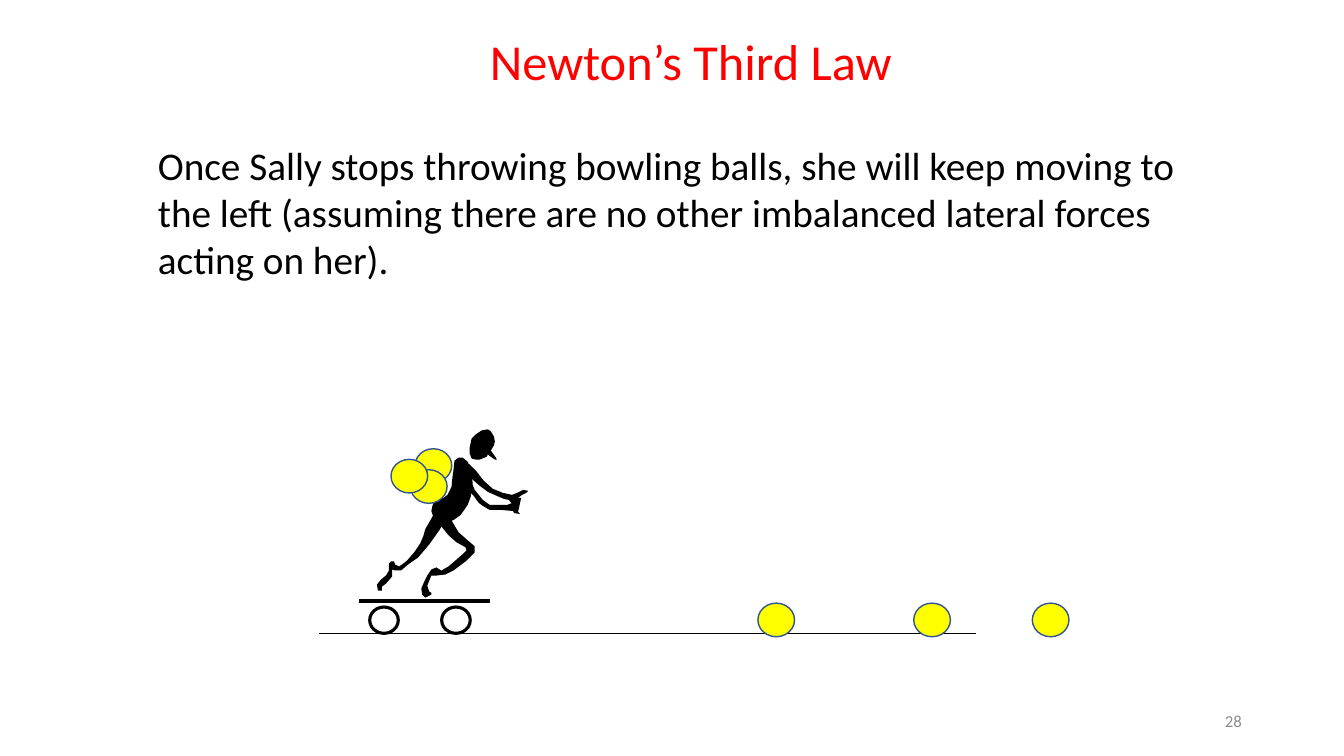
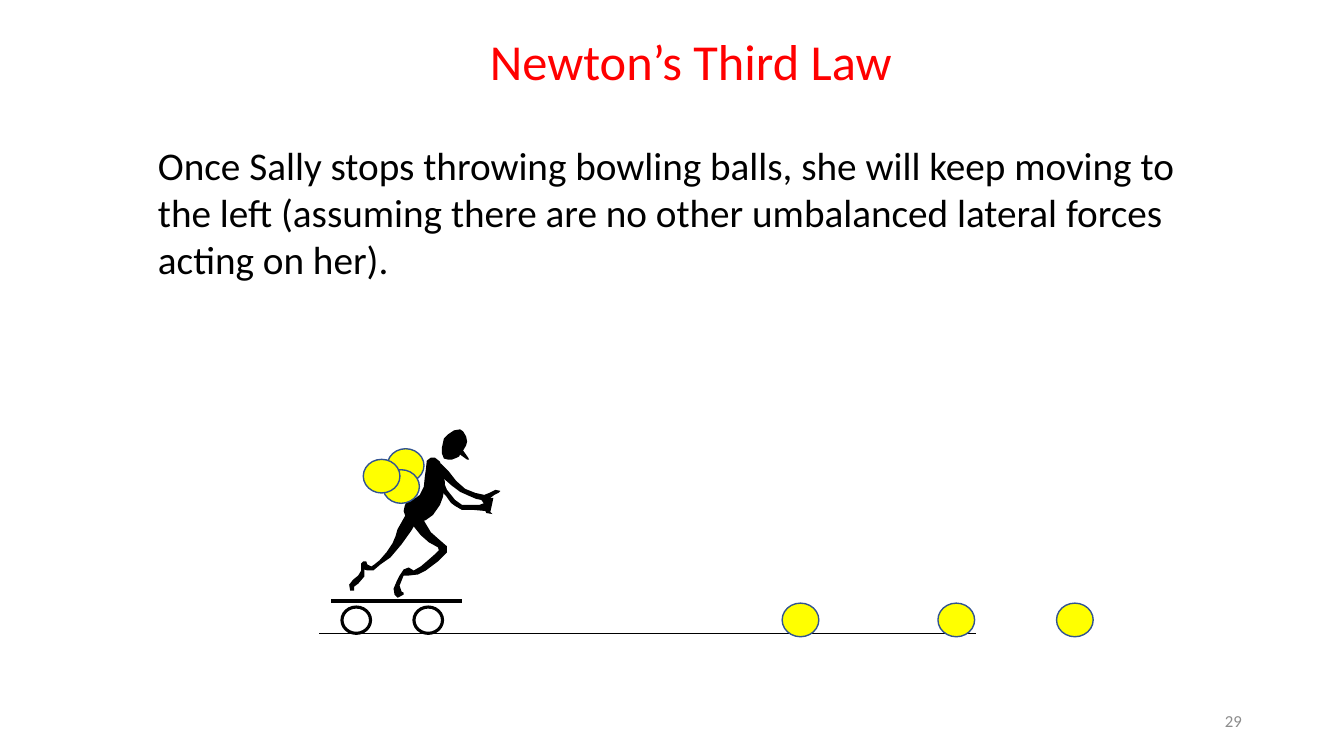
from dataclasses import dataclass

from lxml import etree
from pptx import Presentation
from pptx.dml.color import RGBColor
from pptx.enum import shapes as kinds, text as txt
from pptx.oxml.ns import qn
from pptx.util import Pt


@dataclass(frozen=True)
class Theme:
    font: str = "Calibri"
    title_size: int = 36
    body_size: int = 28
    number_size: int = 12
    title: str = "FF0000"
    ink: str = "000000"
    muted: str = "8C8C8C"
    paper: str = "FFFFFF"
    ball: str = "FFFF00"
    ball_edge: str = "325491"


THEME = Theme()

# Boxes are left, top, width, height in points.
SLIDE_SIZE = (960, 540)
TITLE_BOX = (206.6, 18, 573.8, 51)
STATEMENT_BOX = (105.8, 97.2, 751, 108.7)
NUMBER_BOX = (678.2, 500.4, 216, 28.8)
GROUND_BOX = (228.2, 452.2, 468.7, 0)
BALL_SIZE = (26.2, 24)
WHEEL_SIZE = (20.4, 18.8)
SKATER_TOP = 306.7
ROLLING_TOP = 430.8
ROLLING_OFFSETS = (0, 111.3, 196)
CARRIED_OFFSETS = ((40.2, 13.8), (36.9, 28.8), (23, 21.4))
WHEEL_OFFSETS = ((7.8, 126.9), (59.2, 126.9))
DECK_OFFSET = 122.4
DECK_LENGTH = 93.6

# Body outlines lie on a fine grid measured from the skater's top left.
GRID_STEP = 0.72
HEAD = (
    (131, 21), (134, 16), (135, 12), (134, 7), (131, 2), (128, 0), (122, 1),
    (116, 5), (112, 9), (110, 18), (110, 24), (112, 29), (116, 30), (120, 30),
    (125, 28), (127, 27), (128, 25), (135, 30), (137, 30), (136, 28),
)
TORSO = (
    (93, 47), (94, 40), (95, 31), (99, 28), (103, 28), (108, 32), (111, 41),
    (113, 53), (111, 67), (108, 75), (101, 85), (94, 90), (85, 93), (78, 91),
    (74, 87), (72, 81), (73, 76), (75, 71), (79, 69), (84, 68), (88, 65),
    (92, 57),
)
FRONT_LEG = (
    (80, 81), (82, 78), (86, 78), (89, 82), (93, 92), (99, 102), (108, 110),
    (115, 116), (115, 119), (115, 122), (106, 131), (94, 140), (86, 144),
    (77, 145), (72, 145), (70, 150), (68, 155), (70, 161), (72, 162),
    (72, 164), (66, 167), (63, 164), (62, 158), (65, 151), (68, 145),
    (72, 139), (77, 137), (82, 140), (89, 136), (96, 130), (104, 123),
    (107, 120), (106, 117), (97, 112), (89, 105), (81, 95), (77, 87),
)
BACK_LEG = (
    (66, 99), (74, 85), (81, 78), (86, 79), (88, 86), (80, 100), (70, 114),
    (59, 127), (49, 134), (42, 140), (36, 140), (33, 139), (33, 146),
    (27, 153), (23, 156), (23, 160), (19, 160), (18, 154), (22, 149),
    (27, 145), (30, 140), (30, 134), (30, 133), (32, 131), (35, 131),
    (36, 134), (40, 136), (43, 134), (48, 130), (55, 122), (61, 113),
    (64, 106),
)
FAR_ARM = (
    (101, 41), (100, 35), (103, 33), (109, 34), (117, 42), (124, 51),
    (133, 59), (143, 63), (152, 65), (157, 63), (163, 60), (168, 61),
    (166, 63), (162, 65), (158, 68), (157, 71), (157, 76), (154, 78),
    (152, 74), (149, 70), (144, 69), (137, 66), (128, 62), (120, 56),
    (112, 49), (104, 45),
)
NEAR_ARM = (
    (100, 45), (101, 37), (106, 36), (109, 40), (110, 48), (115, 60),
    (123, 70), (130, 75), (147, 75), (155, 72), (158, 68), (161, 68),
    (160, 73), (158, 82), (160, 84), (154, 83), (153, 81), (142, 80),
    (130, 80), (123, 76), (119, 73), (114, 66), (106, 58), (101, 51),
)
BODY = (HEAD, TORSO, FRONT_LEG, BACK_LEG, FAR_ARM, NEAR_ARM)

HEADING = "Newton’s Third Law"
STATEMENT = (
    "Once Sally stops throwing bowling balls, she will keep moving to the left "
    "(assuming there are no other {} lateral forces acting on her)."
)
FIRST_NUMBER = 28
# Word in the statement, left of the skater, left of the first rolling ball.
STAGES = (("imbalanced", 256.3, 541.4), ("umbalanced", 236.5, 558.7))


def rgb(code):
    return RGBColor.from_string(code)


def write(holder, words, *, size, color, align=txt.PP_ALIGN.LEFT,
          anchor=txt.MSO_ANCHOR.TOP, fit=txt.MSO_AUTO_SIZE.SHAPE_TO_FIT_TEXT):
    frame = holder.text_frame
    frame.word_wrap = True
    frame.auto_size = fit
    frame.vertical_anchor = anchor
    paragraph = frame.paragraphs[0]
    paragraph.alignment = align
    run = paragraph.add_run()
    run.text = words
    run.font.name = THEME.font
    run.font.size = Pt(size)
    run.font.color.rgb = rgb(color)


def add_rule(parts, left, top, length, weight):
    rule = parts.add_connector(kinds.MSO_CONNECTOR.STRAIGHT, Pt(left), Pt(top),
                               Pt(left + length), Pt(top))
    rule.line.color.rgb = rgb(THEME.ink)
    rule.line.width = Pt(weight)
    etree.SubElement(rule._element.spPr, qn("a:effectLst"))


def add_disc(parts, left, top, size, fill, edge, weight):
    disc = parts.add_shape(kinds.MSO_SHAPE.OVAL, Pt(left), Pt(top),
                           *map(Pt, size))
    disc.shadow.inherit = False
    disc.fill.solid()
    disc.fill.fore_color.rgb = rgb(fill)
    disc.line.color.rgb = rgb(edge)
    disc.line.width = Pt(weight)


def add_ball(parts, left, top):
    add_disc(parts, left, top, BALL_SIZE, THEME.ball, THEME.ball_edge, 1)


def add_limb(parts, left, top, outline):
    builder = parts.build_freeform(*outline[0], scale=Pt(GRID_STEP))
    builder.add_line_segments(outline[1:], close=True)
    limb = builder.convert_to_shape(Pt(left), Pt(top))
    limb.shadow.inherit = False
    limb.fill.solid()
    limb.fill.fore_color.rgb = rgb(THEME.ink)
    limb.line.fill.background()


def add_skater(slide, left, top):
    """Group Sally, her skateboard and the balls she carries."""
    parts = slide.shapes.add_group_shape().shapes
    for outline in BODY:
        add_limb(parts, left, top, outline)
    add_rule(parts, left, top + DECK_OFFSET, DECK_LENGTH, 3)
    for dx, dy in WHEEL_OFFSETS:
        add_disc(parts, left + dx, top + dy, WHEEL_SIZE,
                 THEME.paper, THEME.ink, 2.25)
    for dx, dy in CARRIED_OFFSETS:
        add_ball(parts, left + dx, top + dy)


def add_scene(slide, skater_left, rolling_left):
    left, top, length, _ = GROUND_BOX
    add_rule(slide.shapes, left, top, length, 0.75)
    add_skater(slide, skater_left, SKATER_TOP)
    for offset in ROLLING_OFFSETS:
        add_ball(slide.shapes, rolling_left + offset, ROLLING_TOP)


def add_heading(slide, box):
    heading = slide.shapes.title
    heading.left, heading.top, heading.width, heading.height = map(Pt, box)
    write(heading, HEADING, size=THEME.title_size, color=THEME.title,
          align=txt.PP_ALIGN.CENTER)


def add_text(slide, box, words, **style):
    write(slide.shapes.add_textbox(*map(Pt, box)), words, **style)


def add_stage(deck, number, word, skater_left, rolling_left):
    slide = deck.slides.add_slide(deck.slide_layouts.get_by_name("Title Only"))
    add_heading(slide, TITLE_BOX)
    add_scene(slide, skater_left, rolling_left)
    add_text(slide, STATEMENT_BOX, STATEMENT.format(word),
             size=THEME.body_size, color=THEME.ink)
    add_text(slide, NUMBER_BOX, str(number), size=THEME.number_size,
             color=THEME.muted, align=txt.PP_ALIGN.RIGHT,
             anchor=txt.MSO_ANCHOR.MIDDLE, fit=txt.MSO_AUTO_SIZE.NONE)


def main():
    deck = Presentation()
    deck.slide_width, deck.slide_height = map(Pt, SLIDE_SIZE)
    for number, stage in enumerate(STAGES, FIRST_NUMBER):
        add_stage(deck, number, *stage)
    deck.save("out.pptx")


if __name__ == "__main__":
    main()
